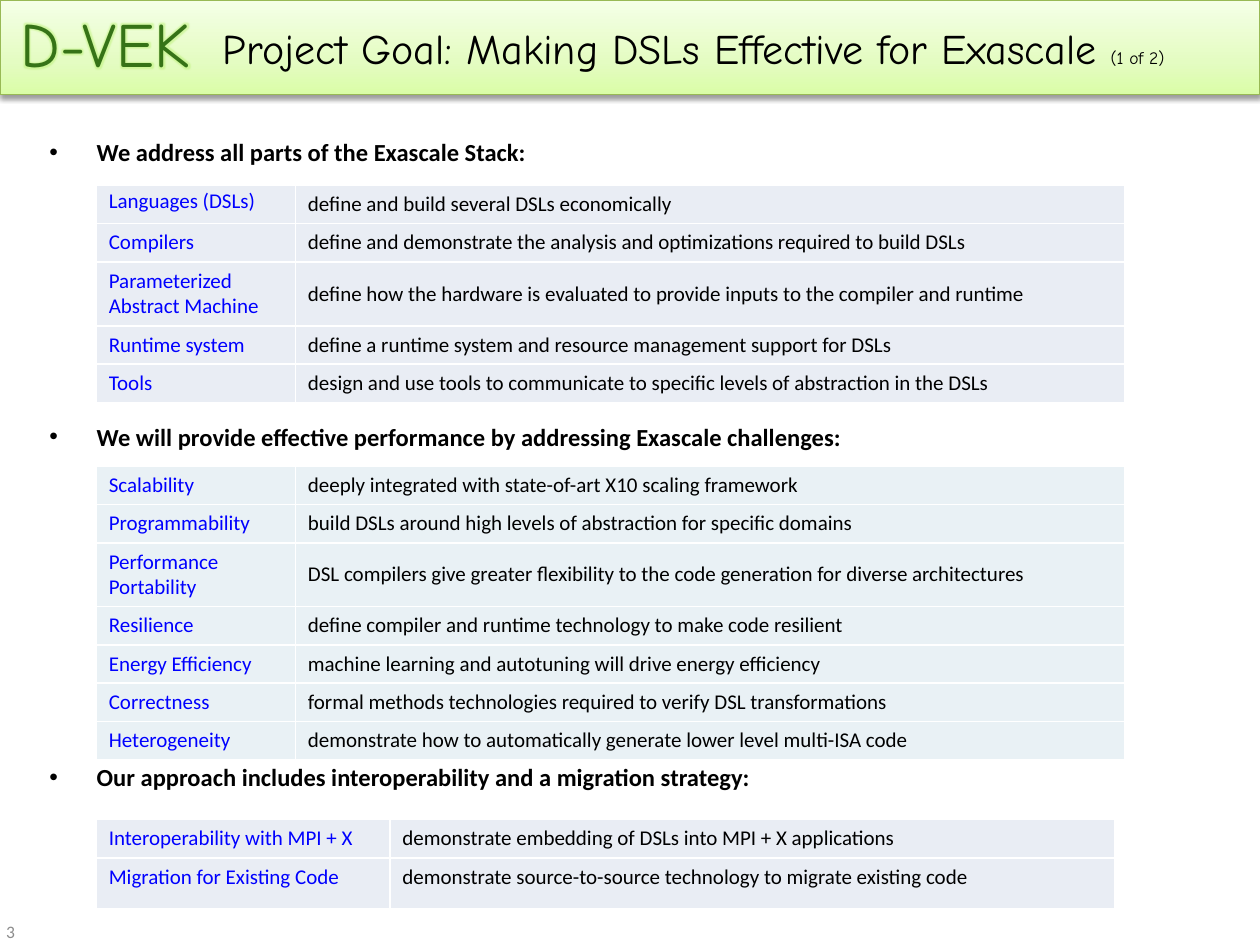
from dataclasses import dataclass

from lxml.etree import SubElement
from pptx import Presentation
from pptx.dml.color import RGBColor
from pptx.enum.shapes import MSO_SHAPE as Preset
from pptx.enum.text import MSO_ANCHOR as Anchor, MSO_AUTO_SIZE as AutoSize, PP_ALIGN as Align
from pptx.oxml import parse_xml
from pptx.oxml.ns import nsdecls, qn
from pptx.util import Pt


@dataclass(frozen=True)
class Theme:
    body_font: str = "Calibri"
    display_font: str = "Comic Neue"
    ink: str = "000000"
    label: str = "0000FF"
    project: str = "367317"
    glow: str = "B5F06A"
    muted: str = "8C8C8C"
    lavender: str = "E9EDF4"
    mist: str = "E9F1F5"
    rule: str = "FFFFFF"
    banner_line: str = "98B955"
    banner_stops: tuple = ((0, "DAFDA7"), (35, "E4FCC2"), (100, "F5FFE7"))
    project_size: float = 36
    title_size: float = 24
    heading_size: float = 14
    cell_size: float = 12
    small_size: float = 10


THEME = Theme()
PROJECT = "D-VEK"
TITLE = "Project Goal: Making DSLs Effective for Exascale "
PART = "(1 of 2)"
PAGE = "3"

ROW, TALL_ROW, LAST_ROW = 21.8, 36.4, 29.4
TABLE_LEFT = 55
SECTIONS = [
    dict(
        heading="We address all parts of the Exascale Stack:",
        space_before=0, top=106, columns=(113.8, 473.8), fill=THEME.lavender,
        rows=[
            ("Languages (DSLs)", "define and build several DSLs economically", ROW),
            ("Compilers", "define and demonstrate the analysis and optimizations required to build DSLs", ROW),
            ("Parameterized Abstract Machine",
             "define how the hardware is evaluated to provide inputs to the compiler and runtime", TALL_ROW),
            ("Runtime system", "define a runtime system and resource management support for DSLs", ROW),
            ("Tools", "design and use tools to communicate to specific levels of abstraction in the DSLs", ROW),
        ],
    ),
    dict(
        heading="We will provide effective performance by addressing Exascale challenges:",
        space_before=149.2, top=266.5, columns=(113.8, 473.8), fill=THEME.mist,
        rows=[
            ("Scalability", "deeply integrated with state-of-art X10 scaling framework", ROW),
            ("Programmability", "build DSLs around high levels of abstraction for specific domains", ROW),
            ("Performance Portability",
             "DSL compilers give greater flexibility to the code generation for diverse architectures", TALL_ROW),
            ("Resilience", "define compiler and runtime technology to make code resilient", ROW),
            ("Energy Efficiency", "machine learning and autotuning will drive energy efficiency", ROW),
            ("Correctness", "formal methods technologies required to verify DSL transformations", ROW),
            ("Heterogeneity", "demonstrate how to automatically generate lower level multi-ISA code", ROW),
        ],
    ),
    dict(
        heading="Our approach includes interoperability and a migration strategy:",
        space_before=181.1, top=468.3, columns=(167.8, 414), fill=THEME.lavender,
        rows=[
            ("Interoperability with MPI + X", "demonstrate embedding of DSLs into MPI + X applications", ROW),
            ("Migration for Existing Code",
             "demonstrate source-to-source technology to migrate existing code", LAST_ROW),
        ],
    ),
]


def add_run(paragraph, text, size, color, font=THEME.body_font, bold=False):
    run = paragraph.add_run()
    run.text = text
    run.font.size = Pt(size)
    run.font.name = font
    run.font.bold = bold
    run.font.color.rgb = RGBColor.from_string(color)
    return run


def place(shape, left, top, width, height, anchor=Anchor.MIDDLE):
    shape.left, shape.top, shape.width, shape.height = map(Pt, (left, top, width, height))
    frame = shape.text_frame
    frame.word_wrap = True
    frame.auto_size = AutoSize.NONE
    frame.vertical_anchor = anchor
    return frame


def add_label(slide, left, top, width, height):
    box = slide.shapes.add_textbox(0, 0, 0, 0)
    return place(box, left, top, width, height).paragraphs[0]


def add_banner(slide):
    banner = slide.shapes.add_shape(Preset.RECTANGLE, 0, 0, Pt(720), Pt(54))
    banner.line.color.rgb = RGBColor.from_string(THEME.banner_line)
    banner.line.width = Pt(0.75)
    stops = "".join(
        f'<a:gs pos="{pos * 1000}"><a:srgbClr val="{color}"/></a:gs>' for pos, color in THEME.banner_stops
    )
    properties = banner._element.spPr
    properties.find(qn("a:ln")).addprevious(parse_xml(
        f'<a:gradFill {nsdecls("a")} rotWithShape="1"><a:gsLst>{stops}</a:gsLst>'
        '<a:lin ang="16200000" scaled="0"/></a:gradFill>'
    ))
    properties.append(parse_xml(
        f'<a:effectLst {nsdecls("a")}><a:outerShdw blurRad="{Pt(3.1)}" dist="{Pt(1.6)}" dir="5400000" '
        'rotWithShape="0"><a:srgbClr val="000000"><a:alpha val="38000"/></a:srgbClr>'
        '</a:outerShdw></a:effectLst>'
    ))
    slide.shapes._spTree.insert(2, banner._element)


def add_project_name(slide):
    paragraph = add_label(slide, 0, 0, 120, 48)
    paragraph.alignment = Align.CENTER
    run = add_run(paragraph, PROJECT, THEME.project_size, THEME.project, THEME.display_font)
    run._r.rPr.find(qn("a:solidFill")).addnext(parse_xml(
        f'<a:effectLst {nsdecls("a")}><a:glow rad="{Pt(4)}"><a:srgbClr val="{THEME.glow}">'
        '<a:alpha val="45000"/></a:srgbClr></a:glow></a:effectLst>'
    ))


def fill_title(title):
    paragraph = place(title, 120, 6, 600, 42).paragraphs[0]
    paragraph.alignment = Align.LEFT
    add_run(paragraph, TITLE, THEME.title_size, THEME.ink, THEME.display_font)
    add_run(paragraph, PART, THEME.small_size, THEME.ink, THEME.display_font)


def fill_headings(body):
    frame = place(body, 21, 78, 678, 444, Anchor.TOP)
    for index, section in enumerate(SECTIONS):
        paragraph = frame.add_paragraph() if index else frame.paragraphs[0]
        paragraph.line_spacing = 0.8
        paragraph.space_before = Pt(section["space_before"])
        properties = paragraph._p.get_or_add_pPr()
        properties.set("marL", str(Pt(27)))
        properties.set("indent", str(Pt(-27)))
        SubElement(properties, qn("a:buChar"), char="•")
        add_run(paragraph, section["heading"], THEME.heading_size, THEME.ink, bold=True)


def format_cell(cell, fill):
    cell.fill.solid()
    cell.fill.fore_color.rgb = RGBColor.from_string(fill)
    properties = cell._tc.get_or_add_tcPr()
    for index, side in enumerate(("lnL", "lnR", "lnT", "lnB")):
        properties.insert(index, parse_xml(
            f'<a:{side} {nsdecls("a")} w="{Pt(1)}"><a:solidFill><a:srgbClr val="{THEME.rule}"/>'
            f'</a:solidFill></a:{side}>'
        ))


def add_section_table(slide, section):
    rows, columns = section["rows"], section["columns"]
    table = slide.shapes.add_table(
        len(rows), len(columns), Pt(TABLE_LEFT), Pt(section["top"]),
        Pt(sum(columns)), Pt(sum(height for *_, height in rows)),
    ).table
    table.first_row = table.horz_banding = False
    for column, width in zip(table.columns, columns):
        column.width = Pt(width)
    for row, (label, detail, height) in zip(table.rows, rows):
        row.height = Pt(height)
        for cell, text, color in zip(row.cells, (label, detail), (THEME.label, THEME.ink)):
            format_cell(cell, section["fill"])
            cell.vertical_anchor = Anchor.MIDDLE if height == TALL_ROW else Anchor.TOP
            add_run(cell.text_frame.paragraphs[0], text, THEME.cell_size, color)
    return table


def main():
    deck = Presentation()
    deck.slide_width, deck.slide_height = Pt(720), Pt(540)
    slide = deck.slides.add_slide(deck.slide_layouts[1])
    add_banner(slide)
    fill_title(slide.shapes.title)
    fill_headings(slide.placeholders[1])
    tables = [add_section_table(slide, section) for section in SECTIONS]
    tables[0].cell(0, 0).text_frame.paragraphs[0].line_spacing = 0.8
    add_project_name(slide)
    add_run(add_label(slide, -3.6, 518, 36, 28.8), PAGE, THEME.small_size, THEME.muted)
    deck.save("out.pptx")


if __name__ == "__main__":
    main()
